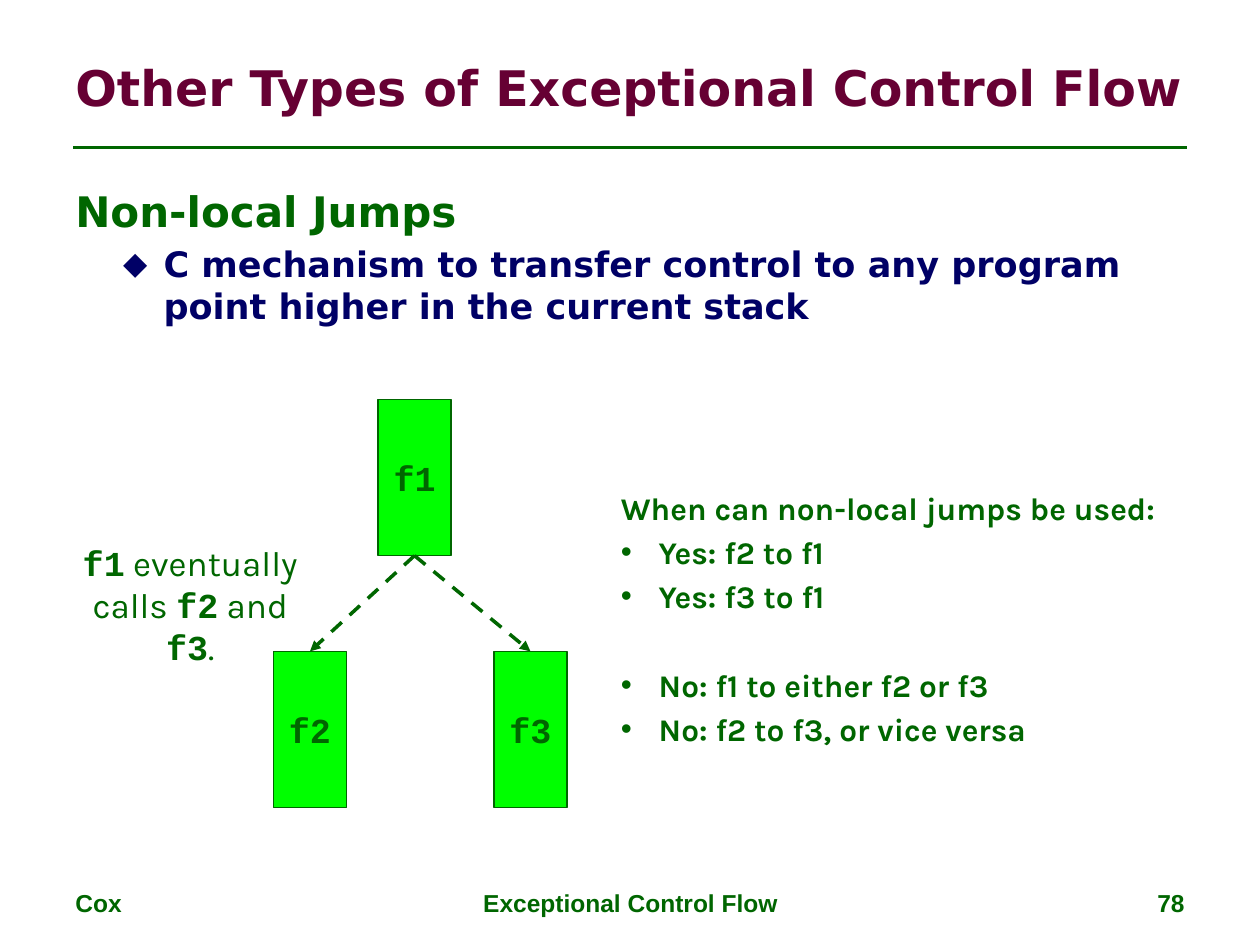
import pptx
import pptx.dml.color
import pptx.enum.dml
import pptx.enum.shapes
import pptx.enum.text
import pptx.oxml
import pptx.oxml.ns
import pptx.util
from pptx.util import Inches

GREEN, LIME, MAROON, NAVY = "006600", "00FF00", "660033", "000066"
SANS, MONO, BODY, PLAIN = "DejaVu Sans", "Courier New", "Karla", "Arial"
ALIGN = pptx.enum.text.PP_ALIGN
ANCHOR = pptx.enum.text.MSO_ANCHOR


def rgb(value):
    return pptx.dml.color.RGBColor.from_string(value)


def add_xml(parent, tag, **attrs):
    el = parent.makeelement(pptx.oxml.ns.qn(tag), attrs)
    parent.append(el)
    return el


def add_text(tf, *runs, size=20, font=BODY, color=GREEN, bold=True,
             align=ALIGN.LEFT, before=0, left=0, hang=0, bullet=None,
             bullet_size=100, bullet_font=PLAIN):
    """Add one paragraph; a run is a string or a (string, font, bold) tuple."""
    p = tf.paragraphs[0]
    if p.runs:
        p = tf.add_paragraph()
    p.alignment = align
    p.space_before = pptx.util.Pt(before)
    pPr = p._p.get_or_add_pPr()
    pPr.set("marL", str(Inches(left)))
    pPr.set("indent", str(-Inches(hang)))
    if bullet:
        add_xml(pPr, "a:buSzPct", val=str(bullet_size * 1000))
        add_xml(pPr, "a:buFont", typeface=bullet_font)
        add_xml(pPr, "a:buChar", char=bullet)
    for run in runs:
        text, face, weight = (run, font, bold) if isinstance(run, str) else run
        r = p.add_run()
        r.text = text
        r.font.name = face
        r.font.size = pptx.util.Pt(size)
        r.font.bold = weight
        r.font.color.rgb = rgb(color)


def add_box(s, x, y, w, h, wrap=True, anchor=ANCHOR.TOP):
    tf = s.shapes.add_textbox(Inches(x), Inches(y), Inches(w), Inches(h)).text_frame
    tf.word_wrap = wrap
    tf.vertical_anchor = anchor
    return tf


def add_line(s, x1, y1, x2, y2, width):
    line = s.shapes.add_connector(pptx.enum.shapes.MSO_CONNECTOR.STRAIGHT,
                                  Inches(x1), Inches(y1), Inches(x2), Inches(y2))
    line.line.color.rgb = rgb(GREEN)
    line.line.width = pptx.util.Pt(width)
    add_xml(line._element.spPr, "a:effectLst")
    return line


def add_title(s, x, y, w, h):
    tf = add_box(s, x, y, w, h, wrap=False, anchor=ANCHOR.MIDDLE)
    add_text(tf, "Other Types of Exceptional Control Flow",
             size=28, font=SANS, color=MAROON)
    add_line(s, x + 0.08, 1.17, x + w - 0.08, 1.17, 1.5)


def add_body(s, x, y, w, h):
    tf = add_box(s, x, y, w, h)
    add_text(tf, "Non-local Jumps", size=24, font=SANS, left=0.19, hang=0.19)
    add_text(tf, "C mechanism to transfer control to any program point "
             "higher in the current stack", font=SANS, color=NAVY, before=4,
             left=0.7, hang=0.32, bullet="◆", bullet_size=90, bullet_font=SANS)


def add_function(s, name, x, y):
    sp = s.shapes.add_shape(pptx.enum.shapes.MSO_SHAPE.RECTANGLE,
                            Inches(x), Inches(y), Inches(0.58), Inches(1.24))
    sp.shadow.inherit = False
    sp.fill.solid()
    sp.fill.fore_color.rgb = rgb(LIME)
    sp.line.color.rgb = rgb(GREEN)
    sp.line.width = pptx.util.Pt(0.75)
    tf = sp.text_frame
    tf.word_wrap = False
    tf.vertical_anchor = ANCHOR.MIDDLE
    add_text(tf, name, font=MONO, align=ALIGN.CENTER)
    return sp


def add_call(s, caller, callee):
    call = add_line(s, 0, 0, 1, 1, 2)
    call.begin_connect(caller, 2)
    call.end_connect(callee, 0)
    call.line.dash_style = pptx.enum.dml.MSO_LINE.DASH
    add_xml(call.line._get_or_add_ln(), "a:tailEnd", type="triangle")


def add_call_tree(s, x, y):
    # Caller on top, callees below
    f1 = add_function(s, "f1", x + 2.58, y)
    for name, dx in (("f2", 1.75), ("f3", 3.5)):
        add_call(s, f1, add_function(s, name, x + dx, y + 2))
    # Explanation beside the tree
    tf = add_box(s, x + 0.09, y + 1.08, 2, 1.1)
    add_text(tf, ("f1", MONO, True), " eventually", bold=False, align=ALIGN.CENTER)
    add_text(tf, "calls ", ("f2", MONO, True), " and ", ("f3", MONO, True), ".",
             bold=False, align=ALIGN.CENTER)


def add_rules(s, x, y, w, h):
    tf = add_box(s, x, y, w, h, wrap=False)
    add_text(tf, "When can non-local jumps be used:", size=18)
    # The wider gap separates the "No" cases from the "Yes" cases
    for text, before in (("Yes: f2 to f1", 3.6), ("Yes: f3 to f1", 3.6),
                         ("No: f1 to either f2 or f3", 29),
                         ("No: f2 to f3, or vice versa", 3.6)):
        add_text(tf, text, size=18, before=before, left=0.3, hang=0.3, bullet="•")


def add_footer(s, y, h):
    for text, x, w, align in (("Cox", 0.5, 2.33, ALIGN.LEFT),
                              ("Exceptional Control Flow", 3.42, 3.17, ALIGN.CENTER),
                              ("78", 7.17, 2.33, ALIGN.RIGHT)):
        add_text(add_box(s, x, y, w, h), text, size=14, font=PLAIN, align=align)


def main():
    prs = pptx.Presentation()
    prs.slide_width, prs.slide_height = Inches(10), Inches(7.5)
    s = prs.slides.add_slide(prs.slide_layouts[6])
    add_title(s, 0.5, 0.3, 9, 0.78)
    add_body(s, 0.5, 1.42, 9, 1.4)
    add_call_tree(s, 0.42, 3.17)
    add_rules(s, 4.83, 3.83, 4.67, 2.21)
    add_footer(s, 7, 0.35)
    prs.save("out.pptx")


if __name__ == "__main__":
    main()
